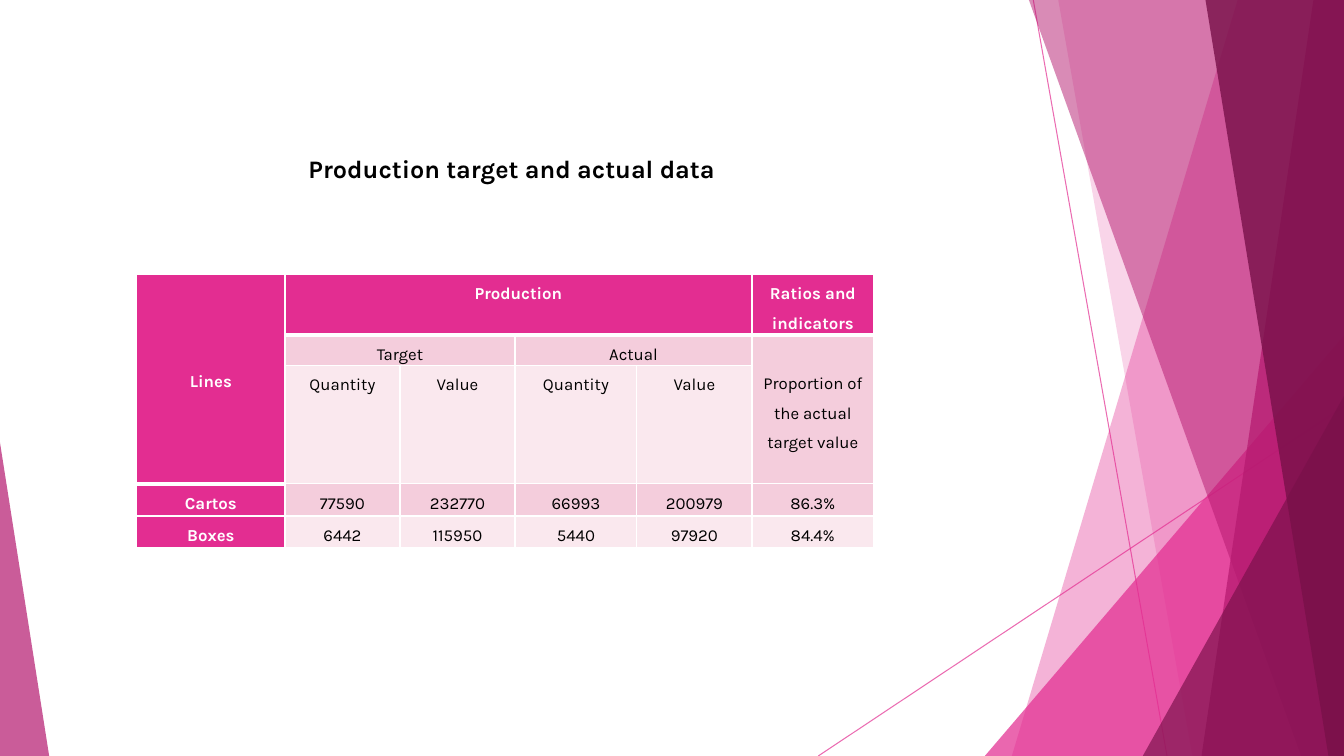
from lxml import etree
from pptx import Presentation
from pptx.dml.color import RGBColor
from pptx.enum import shapes, text
from pptx.oxml import ns
from pptx.util import Cm, Pt

FONT = "Karla"
PINK, MAGENTA, PLUM = "E32D91", "B4186E", "781049"
ROSE, PALE, WHITE, BLACK = "F4CDDC", "FAE8EE", "FFFFFF", "000000"
WIDTH, HEIGHT = 33.87, 19.05

TITLE = "Production target and actual data"
ROWS = [
    ["Lines", "Production", "", "", "", "Ratios and indicators"],
    ["", "Target", "", "Actual", "", "Proportion of the actual target value"],
    ["", "Quantity", "Value", "Quantity", "Value", ""],
    ["Cartos", "77590", "232770", "66993", "200979", "86.3%"],
    ["Boxes", "6442", "115950", "5440", "97920", "84.4%"],
]
MERGES = [((0, 0), (2, 0)), ((0, 1), (0, 4)), ((1, 1), (1, 2)),
          ((1, 3), (1, 4)), ((1, 5), (2, 5))]
COLUMN_WIDTHS = [3.73, 2.9, 2.9, 3.07, 2.9, 3.07]
ROW_HEIGHTS = [1.45, 0.74, 2.97, 0.81, 0.81]
ROW_FILLS = [PINK, ROSE, PALE, ROSE, PALE]
LINE_HEIGHT = 0.74
LINES_ABOVE = {(0, 0): 3, (1, 5): 1}

RAYS = [(26.04, 0, 29.41, HEIGHT), (WIDTH, 10.24, 20.62, HEIGHT)]
FACETS = [
    ("band", (31.19, 25.5), PINK, 36),
    ("band", (26.67, 30.05), PINK, 20),
    ("triangle", (24.82, 8.46, 9.05, 1), PINK, 72),
    ("band", (25.93, 32.79), MAGENTA, 50),
    ("band", (33.1, 30.28), MAGENTA, 70),
    ("band", (30.38, 33.48), PLUM, 80),
    ("triangle", (28.8, 9.98, 5.07, 1), PLUM, 66),
    ("triangle", (0, 11.15, 1.24, 0), MAGENTA, 70),
]


def color(value):
    return RGBColor.from_string(value)


def set_alpha(element, percent):
    for rgb in element.iter(ns.qn("a:srgbClr")):
        etree.SubElement(rgb, ns.qn("a:alpha"), val=str(percent * 1000))


def add_ray(slide, x1, y1, x2, y2):
    ray = slide.shapes.add_connector(
        shapes.MSO_CONNECTOR.STRAIGHT, Cm(x1), Cm(y1), Cm(x2), Cm(y2))
    ray.line.color.rgb = color(PINK)
    ray.line.width = Pt(0.75)
    properties = ray._element.spPr
    set_alpha(properties, 70)
    etree.SubElement(properties, ns.qn("a:effectLst"))


def add_facet(slide, kind, geometry, fill, alpha):
    if kind == "band":
        top, bottom = geometry
        builder = slide.shapes.build_freeform(Cm(top), 0)
        builder.add_line_segments([(Cm(WIDTH), 0), (Cm(WIDTH), Cm(HEIGHT)),
                                   (Cm(bottom), Cm(HEIGHT))], close=True)
        shape = builder.convert_to_shape()
    else:
        left, top, width, apex = geometry
        shape = slide.shapes.add_shape(
            shapes.MSO_SHAPE.ISOSCELES_TRIANGLE,
            Cm(left), Cm(top), Cm(width), Cm(HEIGHT - top))
        shape.adjustments[0] = apex
    shape.shadow.inherit = False
    shape.line.fill.background()
    shape.fill.solid()
    shape.fill.fore_color.rgb = color(fill)
    set_alpha(shape._element.spPr, alpha)


def set_borders(cell, widths):
    properties = cell._tc.get_or_add_tcPr()
    for side, points in zip("LRTB", widths):
        line = etree.SubElement(properties, ns.qn("a:ln" + side), w=str(Pt(points)))
        fill = etree.SubElement(line, ns.qn("a:solidFill"))
        etree.SubElement(fill, ns.qn("a:srgbClr"), val=WHITE)


def format_cell(cell, row, column):
    header = row == 0 or column == 0
    first_body_row = 3 if column == 0 else 1
    set_borders(cell, (1, 1, 3 if row == first_body_row else 1,
                       3 if row == first_body_row - 1 else 1))
    cell.fill.solid()
    cell.fill.fore_color.rgb = color(PINK if header else ROW_FILLS[row])
    cell.margin_left = cell.margin_right = Cm(0.17)
    cell.margin_top = Cm(LINE_HEIGHT * LINES_ABOVE.get((row, column), 0))
    cell.margin_bottom = 0
    paragraph = cell.text_frame.paragraphs[0]
    paragraph.alignment = text.PP_ALIGN.CENTER
    paragraph.line_spacing = 1.5
    paragraph.font.name = FONT
    paragraph.font.size = Pt(12)
    paragraph.font.bold = header
    paragraph.font.color.rgb = color(WHITE if header else BLACK)


def add_production_table(slide):
    table = slide.shapes.add_table(
        len(ROWS), len(COLUMN_WIDTHS), Cm(3.45), Cm(6.92),
        Cm(sum(COLUMN_WIDTHS)), Cm(sum(ROW_HEIGHTS))).table
    for column, width in zip(table.columns, COLUMN_WIDTHS):
        column.width = Cm(width)
    for row, height in zip(table.rows, ROW_HEIGHTS):
        row.height = Cm(height)
    for row, values in enumerate(ROWS):
        for column, value in enumerate(values):
            cell = table.cell(row, column)
            cell.text = value
            format_cell(cell, row, column)
    for start, end in MERGES:
        table.cell(*start).merge(table.cell(*end))


def format_title(title):
    title.left, title.top, title.width, title.height = (
        Cm(7.52), Cm(3.73), Cm(10.82), Cm(1.02))
    frame = title.text_frame
    frame.text = TITLE
    frame.word_wrap = False
    frame.auto_size = text.MSO_AUTO_SIZE.SHAPE_TO_FIT_TEXT
    frame.vertical_anchor = text.MSO_ANCHOR.TOP
    paragraph = frame.paragraphs[0]
    paragraph.alignment = text.PP_ALIGN.LEFT
    paragraph.font.name = FONT
    paragraph.font.size = Pt(18)
    paragraph.font.bold = True
    paragraph.font.color.rgb = color(BLACK)


def main():
    presentation = Presentation()
    presentation.slide_width, presentation.slide_height = Cm(WIDTH), Cm(HEIGHT)
    slide = presentation.slides.add_slide(presentation.slide_layouts[5])
    for ray in RAYS:
        add_ray(slide, *ray)
    for facet in FACETS:
        add_facet(slide, *facet)
    add_production_table(slide)
    format_title(slide.shapes.title)
    presentation.save("out.pptx")


if __name__ == "__main__":
    main()
